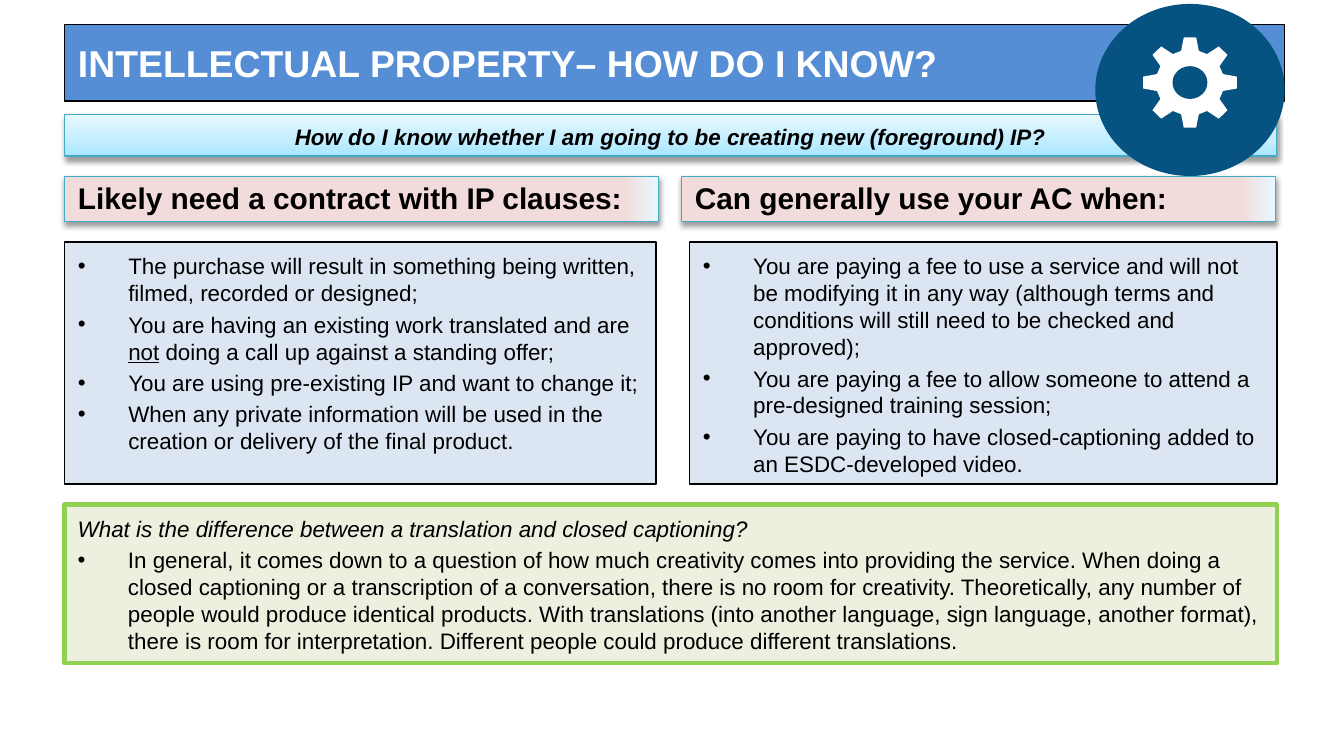
"""Build the slide on how to know whether a purchase creates new IP."""
import math

import pptx
import pptx.chart.data
import pptx.dml.color
import pptx.enum.shapes
import pptx.enum.text
import pptx.oxml.ns
import pptx.util
from lxml import etree

Cm, Pt = pptx.util.Cm, pptx.util.Pt
RGB = pptx.dml.color.RGBColor.from_string
KIND = pptx.enum.shapes.MSO_SHAPE
SIDE = pptx.enum.text.PP_ALIGN
ANCHOR = pptx.enum.text.MSO_ANCHOR
qn = pptx.oxml.ns.qn

HUES = {
    "title": "558ED5", "black": "000000", "white": "FFFFFF", "teal": "46AAC5",
    "pink": "F2DCDB", "ice": "E7F8FF", "sky": "C1EDFF", "aqua": "A7E6FF",
    "blue": "DCE6F2", "green": "EBF1DE", "lime": "92D050", "navy": "065280",
}
TITLE = "INTELLECTUAL PROPERTY– HOW DO I KNOW?"
BANNER = "How do I know whether I am going to be creating new (foreground) IP?"
SIDES = [
    {
        "head": "Likely need a contract with IP clauses:",
        "headx": 1.22, "x": 1.22, "width": 11.18,
        "items": [
            "The purchase will result in something being written, filmed, recorded or designed;",
            "You are having an existing work translated and are _not_ doing a call up against a standing offer;",
            "You are using pre-existing IP and want to change it;",
            "When any private information will be used in the creation or delivery of the final product.",
        ],
    },
    {
        "head": "Can generally use your AC when:",
        "headx": 12.88, "x": 13.03, "width": 11.1,
        "items": [
            "You are paying a fee to use a service and will not be modifying it in any way (although terms and conditions will still need to be checked and approved);",
            "You are paying a fee to allow someone to attend a pre-designed training session;",
            "You are paying to have closed-captioning added to an ESDC-developed video.",
        ],
    },
]
ASK = "What is the difference between a translation and closed captioning?"
REPLY = (
    "In general, it comes down to a question of how much creativity comes into "
    "providing the service. When doing a closed captioning or a transcription of a "
    "conversation, there is no room for creativity. Theoretically, any number of people "
    "would produce identical products. With translations (into another language, sign "
    "language, another format), there is room for interpretation. Different people could "
    "produce different translations."
)
FADES = {
    "head": (0, [(35, "pink"), (94, "pink"), (100, "ice")]),
    "banner": (270, [(0, "aqua"), (35, "sky"), (100, "ice")]),
}
LEFT, WIDE = 1.22, 22.91


def place(shape, x, y, width, height):
    shape.left, shape.top, shape.width, shape.height = map(Cm, (x, y, width, height))
    return shape


def paint(shape, hue, line=None, weight=1):
    shape.shadow.inherit = False
    shape.fill.solid()
    shape.fill.fore_color.rgb = RGB(HUES[hue])
    if line:
        shape.line.color.rgb = RGB(HUES[line])
        shape.line.width = Pt(weight)
    else:
        shape.line.fill.background()


def add(node, tag, **attrs):
    return etree.SubElement(node, qn(tag), {key: str(val) for key, val in attrs.items()})


def fade(shape, name):
    paint(shape, "ice", "teal", 0.75)
    shape.fill.gradient()
    angle, stops = FADES[name]
    props = shape._element.spPr
    grad = props.find(qn("a:gradFill"))
    for child in list(grad):
        grad.remove(child)
    group = add(grad, "a:gsLst")
    for spot, hue in stops:
        add(add(group, "a:gs", pos=spot * 1000), "a:srgbClr", val=HUES[hue])
    add(grad, "a:lin", ang=angle * 60000, scaled=0)
    shade = add(props.find(qn("a:effectLst")), "a:outerShdw", blurRad=Pt(3.1),
                dist=Pt(1.6), dir=90 * 60000, rotWithShape=0)
    add(add(shade, "a:srgbClr", val=HUES["black"]), "a:alpha", val=38000)


def write(shape, text, size=12, hue="black", bold=False, italic=False,
          align=SIDE.LEFT, anchor=ANCHOR.TOP, bullet=False, more=False):
    frame = shape.text_frame
    frame.word_wrap = True
    frame.auto_size = pptx.enum.text.MSO_AUTO_SIZE.NONE
    frame.vertical_anchor = anchor
    if anchor == ANCHOR.TOP:
        frame.margin_top = Cm(0.2)
    para = frame.add_paragraph() if more else frame.paragraphs[0]
    para.alignment = align
    para.space_before = Pt(size * 0.2 if more else 0)
    if bullet:
        props = para._p.get_or_add_pPr()
        props.set("marL", str(Cm(0.95)))
        props.set("indent", str(-Cm(0.95)))
        add(props, "a:buFont", typeface="Arial")
        add(props, "a:buChar", char="•")
    for spot, part in enumerate(text.split("_")):
        run = para.add_run()
        run.text = part
        font = run.font
        font.name, font.size, font.bold, font.italic = "Arial", Pt(size), bold, italic
        font.color.rgb = RGB(HUES[hue])
        if spot % 2:
            font.underline = True


def draw_gear(shapes, x, y):
    def disc(wide, high, hue, midy):
        oval = shapes.add_shape(KIND.OVAL, 0, 0, 0, 0)
        paint(place(oval, x - wide / 2, midy - high / 2, wide, high), hue)

    disc(3.58, 3.25, "navy", 1.7)
    points = []
    for tooth in range(8):
        for radius, turn in ((0.62, -15), (0.86, -7.5), (0.86, 7.5), (0.62, 15)):
            angle = math.radians(tooth * 45 + turn)
            points.append((Cm(x + 1.04 * radius * math.cos(angle)),
                           Cm(y + radius * math.sin(angle))))
    path = shapes.build_freeform(*points[0])
    path.add_line_segments(points[1:], close=True)
    paint(path.convert_to_shape(), "white")
    disc(0.66, 0.62, "navy", y)


def main():
    deck = pptx.Presentation()
    deck.slide_width, deck.slide_height = Cm(25.4), Cm(14.28)
    slide = deck.slides.add_slide(deck.slide_layouts.get_by_name("Comparison"))
    shapes = slide.shapes
    holds = list(slide.placeholders)

    title = place(shapes.title, LEFT, 0.46, 23.06, 1.45)
    paint(title, "title", "black", 0.75)
    write(title, TITLE, size=20, hue="white", bold=True, anchor=ANCHOR.MIDDLE)

    for side, head, body in zip(SIDES, holds[1::2], holds[2::2]):
        fade(place(head, side["headx"], 3.33, 11.23, 0.86), "head")
        write(head, side["head"], size=16, bold=True, anchor=ANCHOR.BOTTOM)
        paint(place(body, side["x"], 4.57, side["width"], 4.57), "blue", "black")
        for spot, item in enumerate(side["items"]):
            write(body, item, bullet=True, more=spot > 0)

    banner = place(shapes.add_shape(KIND.RECTANGLE, 0, 0, 0, 0), LEFT, 2.16, WIDE, 0.79)
    fade(banner, "banner")
    write(banner, BANNER, bold=True, italic=True, align=SIDE.CENTER, anchor=ANCHOR.BOTTOM)

    note = place(shapes.add_shape(KIND.RECTANGLE, 0, 0, 0, 0), LEFT, 9.53, WIDE, 3)
    paint(note, "green", "lime", 2.25)
    write(note, ASK, italic=True)
    write(note, REPLY, bullet=True, more=True)

    draw_gear(shapes, 22.49, 1.56)
    deck.save("out.pptx")


if __name__ == "__main__":
    main()
